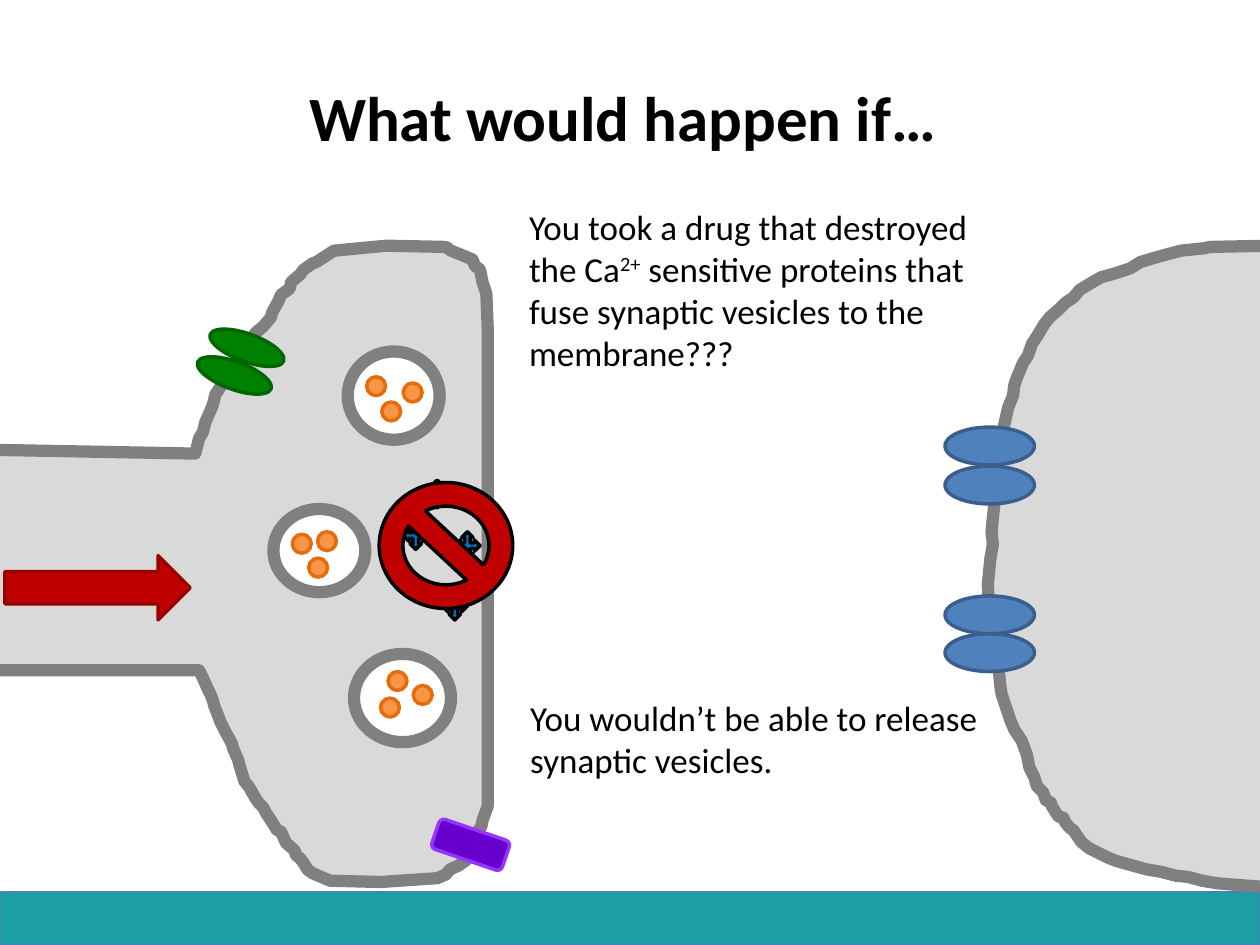
from dataclasses import dataclass
from typing import Any

from pptx import Presentation
from pptx import util as u
from pptx.dml.color import RGBColor
from pptx.enum import shapes, text

PX = 9144  # EMU in one px, 100 px to the inch
KIND = shapes.MSO_SHAPE

AXON_TERMINAL = [
    (-7, 357), (155, 360), (158, 348), (161, 343), (163, 335), (167, 326), (169, 321),
    (171, 313), (177, 304), (185, 292), (190, 283), (194, 276), (200, 268), (203, 264),
    (209, 259), (215, 252), (216, 248), (221, 239), (223, 234), (230, 229), (231, 224),
    (238, 218), (241, 214), (248, 209), (251, 208), (265, 199), (296, 196), (307, 195),
    (354, 196), (358, 199), (368, 203), (375, 206), (377, 211), (381, 214), (383, 224),
    (386, 233), (387, 259), (387, 640), (383, 651), (382, 656), (379, 660), (377, 665),
    (373, 673), (371, 682), (364, 687), (357, 690), (354, 694), (347, 697), (302, 700),
    (262, 699), (255, 696), (248, 693), (244, 690), (241, 685), (238, 681), (235, 679),
    (234, 675), (227, 669), (223, 660), (220, 659), (215, 651), (211, 645), (209, 641),
    (206, 638), (203, 634), (198, 625), (194, 620), (190, 607), (189, 603), (185, 594),
    (184, 590), (179, 581), (175, 573), (170, 560), (169, 556), (167, 551), (165, 547),
    (161, 538), (158, 532), (-8, 532),
]
RECEIVING_CELL = [
    (1005, 704), (978, 702), (966, 701), (954, 699), (943, 696), (933, 695), (922, 692),
    (910, 690), (892, 685), (885, 683), (878, 680), (872, 677), (864, 673), (858, 668),
    (856, 665), (852, 659), (849, 657), (845, 652), (844, 649), (840, 648), (835, 640),
    (834, 637), (830, 635), (828, 629), (823, 624), (821, 617), (817, 609), (815, 599),
    (811, 588), (805, 579), (802, 572), (799, 563), (795, 551), (794, 545), (792, 524),
    (788, 515), (787, 499), (786, 496), (784, 464), (786, 444), (788, 432), (787, 422),
    (788, 411), (789, 402), (792, 373), (793, 365), (795, 346), (798, 333), (800, 324),
    (804, 314), (805, 306), (807, 300), (812, 288), (816, 282), (819, 273), (823, 267),
    (829, 257), (833, 252), (841, 245), (846, 240), (852, 236), (857, 230), (867, 224),
    (874, 220), (885, 217), (897, 213), (905, 208), (915, 205), (922, 203), (937, 199),
    (956, 197), (960, 196), (1008, 195),
]


def color(hex_code):
    return RGBColor.from_string(hex_code)


def add_span(para, words, size=20, bold=False, ink="000000", font="Calibri", raised=0):
    """Add a run to a paragraph; raised is the superscript shift in percent."""
    span = para.add_run()
    span.text = words
    span.font.name, span.font.size, span.font.bold = font, u.Pt(size), bold
    span.font.color.rgb = color(ink)
    if raised:
        span.font._element.set("baseline", str(raised * 1000))


@dataclass
class Sketch:
    page: Any
    thin: float = 2
    membrane_width: float = 7
    membrane: str = "808080"
    cell_fill: str = "D9D9D9"

    def paint(self, item, fill, line, width):
        item.shadow.inherit = False
        item.fill.solid()
        item.fill.fore_color.rgb = color(fill)
        item.line.color.rgb = color(line)
        item.line.width = u.Pt(width)

    def shape(self, kind, at, fill, line, width=None, turn=0, parent=None):
        item = (parent or self.page).shapes.add_shape(kind, *(n * PX for n in at))
        self.paint(item, fill, line, width or self.thin)
        item.rotation = turn

    def cell(self, outline):
        builder = self.page.shapes.build_freeform(*outline[0], scale=PX)
        builder.add_line_segments(outline[1:], close=True)
        self.paint(builder.convert_to_shape(), self.cell_fill, self.membrane,
                   self.membrane_width)

    def vesicle(self, at, transmitters):
        group = self.page.shapes.add_group_shape()
        self.shape(KIND.OVAL, at, "FFFFFF", self.membrane, self.membrane_width, parent=group)
        for left, top in transmitters:
            self.shape(KIND.OVAL, (left, top, 15, 15), "F79646", "E46C0A", parent=group)

    def words(self, at, spans, align=text.PP_ALIGN.LEFT, anchor=text.MSO_ANCHOR.TOP,
              grow=True):
        """Add a one-paragraph text box from (text, format) pairs."""
        box = self.page.shapes.add_textbox(*(n * PX for n in at))
        frame = box.text_frame
        frame.word_wrap = True
        frame.vertical_anchor = anchor
        if grow:
            frame.auto_size = text.MSO_AUTO_SIZE.SHAPE_TO_FIT_TEXT
        para = frame.paragraphs[0]
        para.alignment = align
        for content, style in spans:
            add_span(para, content, **style)


def main():
    deck = Presentation()
    deck.slide_width, deck.slide_height = 1000 * PX, 750 * PX
    sketch = Sketch(deck.slides.add_slide(deck.slide_layouts[6]))

    sketch.shape(KIND.RECTANGLE, (0, 708, 1000, 42), "1C9FA3", "4B7EBC", 0.75)
    sketch.words((50, 30, 900, 125), [("What would happen if… ", {"size": 36, "bold": True})],
                 text.PP_ALIGN.CENTER, text.MSO_ANCHOR.MIDDLE, grow=False)

    sketch.cell(AXON_TERMINAL)
    sketch.cell(RECEIVING_CELL)

    for left, top in [(185, 245), (175, 267)]:
        sketch.shape(KIND.OVAL, (left, top, 22, 62), "008000", "006600", turn=290)

    sketch.vesicle((276, 279, 73, 70), [(291, 299), (320, 304), (303, 319)])
    sketch.vesicle((217, 404, 73, 66), [(232, 424), (252, 422), (245, 443)])
    sketch.vesicle((281, 519, 77, 70), [(308, 533), (328, 544), (302, 554)])

    sketch.shape(KIND.RIGHT_ARROW, (4, 441, 147, 51), "C00000", "990000")
    for top in (503, 473, 370, 339):
        sketch.shape(KIND.OVAL, (750, top, 71, 30), "4F81BD", "3A5F8C")
    sketch.shape(KIND.ROUNDED_RECTANGLE, (344, 658, 59, 25), "6600CC", "9933FF", turn=18.8)

    for left, top in [(320, 414), (337, 381), (361, 422), (351, 470)]:
        sketch.shape(KIND.QUAD_ARROW, (left, top, 20, 22), "0070C0", "000000")

    sketch.words((410, 158, 398, 145), [
        ("You took a drug that destroyed the Ca", {}),
        ("2+", {"raised": 30}),
        (" sensitive proteins that fuse synaptic vesicles to the membrane???", {}),
    ])
    sketch.shape(KIND.NO_SYMBOL, (301, 383, 106, 100), "C00000", "000000")
    sketch.words((411, 548, 398, 77),
                 [("You wouldn’t be able to release synaptic vesicles.", {})])

    deck.save("out.pptx")


if __name__ == "__main__":
    main()
